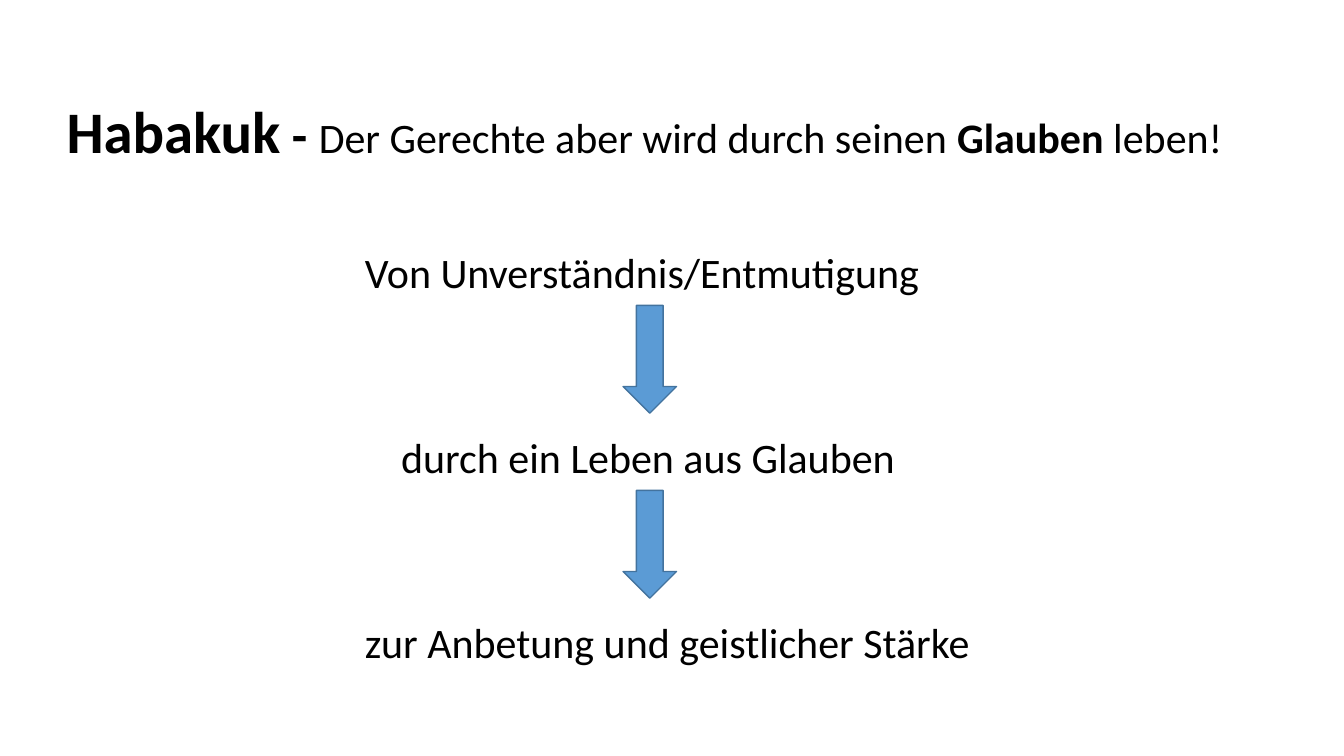
from pptx import Presentation
from pptx.dml.color import RGBColor
from pptx.enum.shapes import MSO_SHAPE
from pptx.enum.text import MSO_ANCHOR, MSO_AUTO_SIZE, PP_ALIGN
from pptx.util import Inches, Pt

DOWN_ARROW = MSO_SHAPE.DOWN_ARROW
TOP = MSO_ANCHOR.TOP
NO_AUTOFIT = MSO_AUTO_SIZE.NONE
LEFT = PP_ALIGN.LEFT

FONT = "Calibri"
BLACK, ARROW_FILL, ARROW_LINE = "000000", "5B9BD5", "43739E"

# Each run: text, size in points, bold
TITLE_RUNS = [
    ("Habakuk", 42, True),
    (" - ", 36, True),
    ("Der Gerechte aber wird durch seinen ", 30, False),
    ("Glauben", 30, True),
    (" leben!", 30, False),
]
# Each step: text, left, width
STEPS = [
    ("Von Unverständnis/Entmutigung", 3.52, 5.85),
    ("durch ein Leben aus Glauben", 3.88, 5.14),
    ("zur Anbetung und geistlicher Stärke", 3.52, 6.29),
]
STEP_SIZE = 30
FIRST_STEP_TOP, STEP_PITCH, STEP_HEIGHT = 2.4, 1.835, 0.61
ARROW_LEFT, ARROW_WIDTH, ARROW_HEIGHT = 6.18, 0.53, 1.07
ARROW_OFFSET = 0.63


def color(hex_string):
    return RGBColor.from_string(hex_string)


def write_runs(shape, runs):
    frame = shape.text_frame
    frame.word_wrap = True
    frame.auto_size = NO_AUTOFIT
    frame.vertical_anchor = TOP
    paragraph = frame.paragraphs[0]
    paragraph.alignment = LEFT
    for text, size, bold in runs:
        run = paragraph.add_run()
        run.text = text
        run.font.name = FONT
        run.font.size = Pt(size)
        run.font.bold = bold
        run.font.color.rgb = color(BLACK)


def add_step(slide, text, left, top, width):
    box = slide.shapes.add_textbox(
        Inches(left), Inches(top), Inches(width), Inches(STEP_HEIGHT))
    write_runs(box, [(text, STEP_SIZE, False)])


def add_arrow(slide, top):
    arrow = slide.shapes.add_shape(
        DOWN_ARROW, Inches(ARROW_LEFT), Inches(top),
        Inches(ARROW_WIDTH), Inches(ARROW_HEIGHT))
    arrow.shadow.inherit = False
    arrow.fill.solid()
    arrow.fill.fore_color.rgb = color(ARROW_FILL)
    arrow.line.color.rgb = color(ARROW_LINE)
    arrow.line.width = Pt(1)


def main():
    presentation = Presentation()
    presentation.slide_width = Inches(13.33)
    presentation.slide_height = Inches(7.5)
    slide = presentation.slides.add_slide(presentation.slide_layouts[5])

    title = slide.shapes.title
    title.left, title.top = Inches(0.56), Inches(0.89)
    title.width, title.height = Inches(11.77), Inches(0.81)
    write_runs(title, TITLE_RUNS)

    for index, (text, left, width) in enumerate(STEPS):
        top = FIRST_STEP_TOP + index * STEP_PITCH
        add_step(slide, text, left, top, width)
        if index < len(STEPS) - 1:
            add_arrow(slide, top + ARROW_OFFSET)

    presentation.save("out.pptx")


if __name__ == "__main__":
    main()
